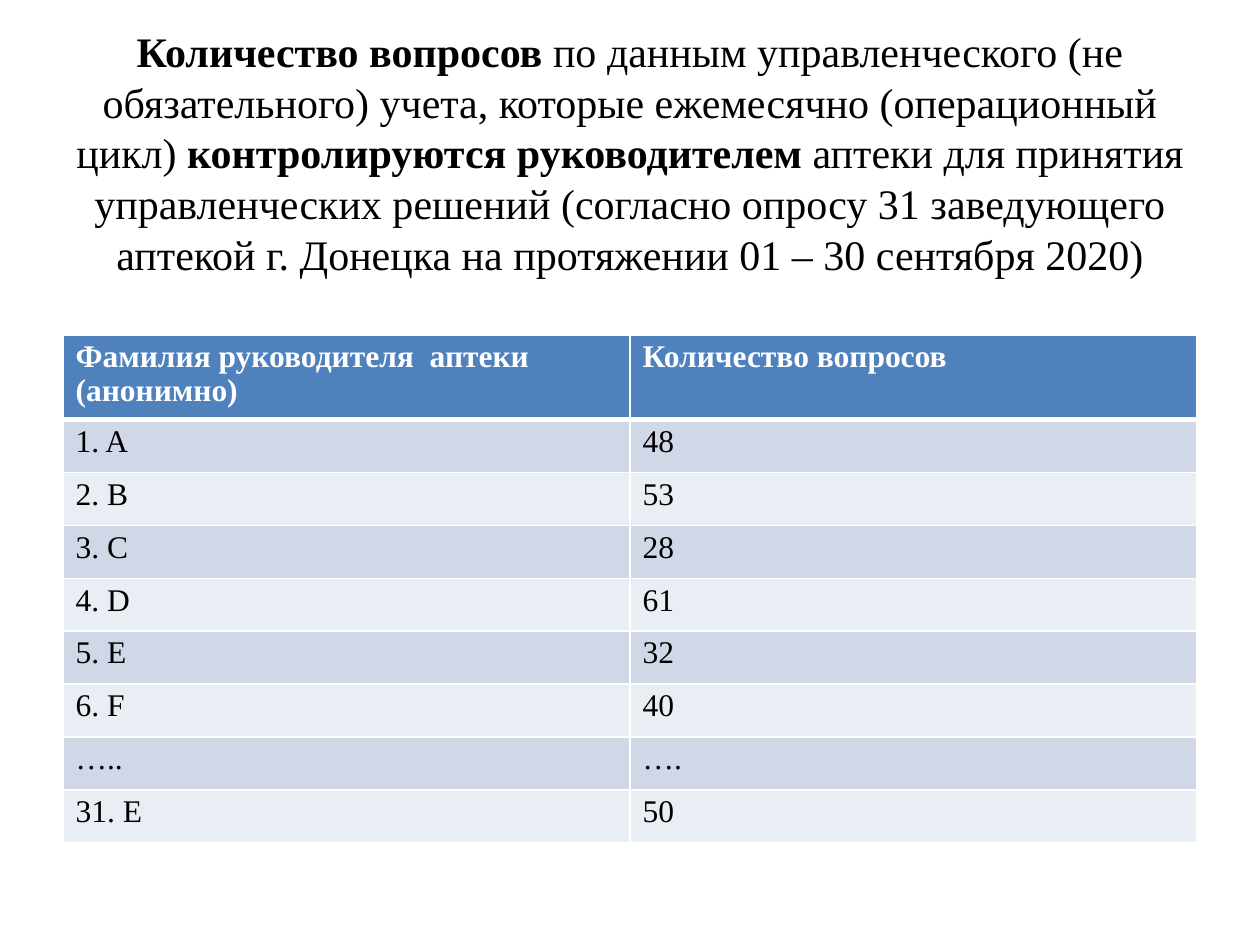
"""Build a slide with a title and a table of questions monitored by pharmacy heads."""
import dataclasses

import lxml.etree
import pptx
import pptx.dml.color
import pptx.enum.text
import pptx.oxml.ns
import pptx.util

TITLE = [
    ("Количество вопросов ", True),
    ("по данным управленческого (не обязательного) учета, которые ежемесячно (операционный цикл) ", False),
    ("контролируются руководителем ", True),
    ("аптеки для принятия управленческих решений (согласно опросу 31 заведующего "
     "аптекой г. Донецка на протяжении 01 – 30 сентября 2020)", False),
]
ROWS = [
    ("Фамилия руководителя  аптеки (анонимно)", "Количество вопросов"),
    ("1. A", "48"),
    ("2. B", "53"),
    ("3. C", "28"),
    ("4. D", "61"),
    ("5. E", "32"),
    ("6. F", "40"),
    ("…..", "…."),
    ("31. Е", "50"),
]


@dataclasses.dataclass(frozen=True)
class Theme:
    font: str = "Times New Roman"
    title_size: int = 24
    title_leading: int = 29
    table_size: int = 18
    table_leading: float = 0.95
    ink: str = "000000"
    paper: str = "FFFFFF"
    header: str = "4F81BD"
    bands: tuple = ("D0D8E8", "E9EDF4")
    rule: int = 1
    header_rule: int = 3


THEME = Theme()
WIDTH, HEIGHT = pptx.util.Inches(10), pptx.util.Inches(7.5)
MARGIN = int(WIDTH * 0.05)
CONTENT_WIDTH = WIDTH - 2 * MARGIN
TITLE_TOP, TITLE_HEIGHT = int(HEIGHT * 0.04), pptx.util.Inches(1.81)
TABLE_TOP = pptx.util.Inches(2.66)
HEADER_HEIGHT, ROW_HEIGHT = pptx.util.Inches(0.64), pptx.util.Inches(0.42)


def apply(target, formats):
    for name, value in formats.items():
        setattr(target, name, value)


def add_span(para, text, size, color, bold):
    span = para.add_run()
    span.text = text
    apply(span.font, {"name": THEME.font, "size": pptx.util.Pt(size), "bold": bold})
    span.font.color.rgb = pptx.dml.color.RGBColor.from_string(color)


def add_borders(cell, bottom, top):
    properties = cell._tc.get_or_add_tcPr()
    widths = {"lnL": THEME.rule, "lnR": THEME.rule, "lnT": top, "lnB": bottom}
    for position, (side, width) in enumerate(widths.items()):
        line = lxml.etree.Element(pptx.oxml.ns.qn(f"a:{side}"), w=str(pptx.util.Pt(width)))
        fill = lxml.etree.SubElement(line, pptx.oxml.ns.qn("a:solidFill"))
        lxml.etree.SubElement(fill, pptx.oxml.ns.qn("a:srgbClr"), val=THEME.paper)
        properties.insert(position, line)


def add_title(page):
    box = page.shapes.add_textbox(MARGIN, TITLE_TOP, CONTENT_WIDTH, TITLE_HEIGHT)
    apply(box.text_frame, {"word_wrap": True, "vertical_anchor": pptx.enum.text.MSO_ANCHOR.MIDDLE})
    para = box.text_frame.paragraphs[0]
    apply(para, {"alignment": pptx.enum.text.PP_ALIGN.CENTER,
                 "line_spacing": pptx.util.Pt(THEME.title_leading)})
    for text, bold in TITLE:
        add_span(para, text, THEME.title_size, THEME.ink, bold)


def add_question_table(page):
    height = HEADER_HEIGHT + ROW_HEIGHT * (len(ROWS) - 1)
    table = page.shapes.add_table(len(ROWS), len(ROWS[0]), MARGIN, TABLE_TOP, CONTENT_WIDTH, height).table
    for index, values in enumerate(ROWS):
        is_header = index == 0
        table.rows[index].height = HEADER_HEIGHT if is_header else ROW_HEIGHT
        background = THEME.header if is_header else THEME.bands[(index - 1) % 2]
        for column, text in enumerate(values):
            cell = table.cell(index, column)
            cell.fill.solid()
            cell.fill.fore_color.rgb = pptx.dml.color.RGBColor.from_string(background)
            add_borders(cell, THEME.header_rule if is_header else THEME.rule,
                        THEME.header_rule if index == 1 else THEME.rule)
            para = cell.text_frame.paragraphs[0]
            para.line_spacing = THEME.table_leading
            add_span(para, text, THEME.table_size, THEME.paper if is_header else THEME.ink, is_header)


def main():
    deck = pptx.Presentation()
    apply(deck, {"slide_width": WIDTH, "slide_height": HEIGHT})
    page = deck.slides.add_slide(deck.slide_layouts[6])
    add_title(page)
    add_question_table(page)
    deck.save("out.pptx")


if __name__ == "__main__":
    main()
